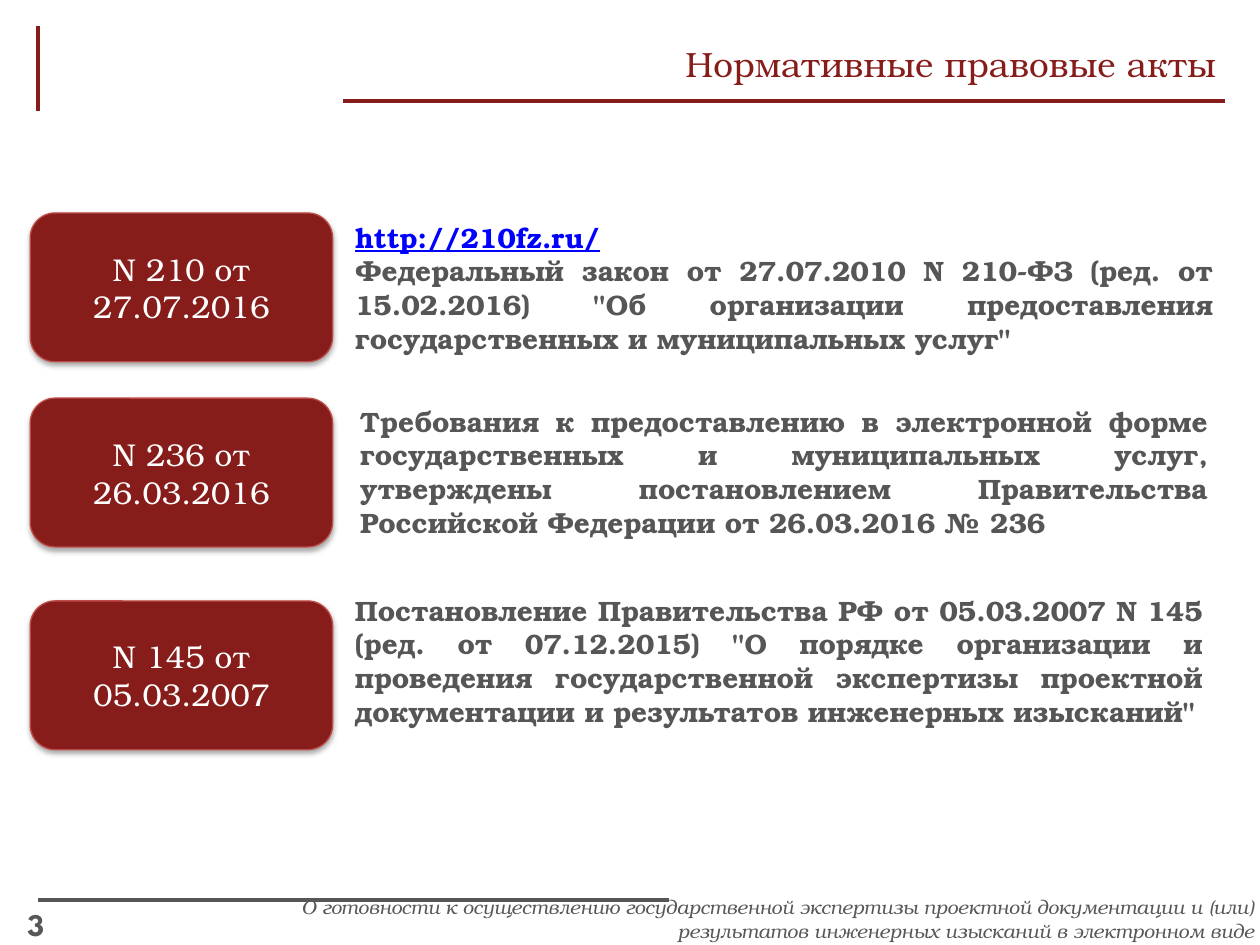
from lxml.etree import SubElement
from pptx import Presentation
from pptx.dml.color import RGBColor
from pptx.enum.shapes import MSO_CONNECTOR, MSO_SHAPE
from pptx.enum.text import MSO_ANCHOR, PP_ALIGN
from pptx.oxml.ns import qn
from pptx.util import Pt

COLORS = {
    "maroon": "861D1A",
    "card_edge": "BF4C48",
    "footer_gray": "565757",
    "body_gray": "575656",
    "link_blue": "0000FF",
    "white": "FFFFFF",
    "black": "000000",
}
SERIF = "TeX Gyre Bonum"
CARD_LEFT, CARD_WIDTH, CARD_HEIGHT = 17.3, 172.8, 85

ACTS = [
    {
        "number": "N 210 от 27.07.2016",
        "card_top": 121.7,
        "box": (195.8, 122.4, 504.7, 85),
        "paragraphs": [
            ("http://210fz.ru/", "link_blue"),
            ("Федеральный закон от 27.07.2010 N 210-ФЗ (ред. от 15.02.2016) "
             "\"Об организации предоставления государственных и муниципальных услуг\"", "body_gray"),
        ],
    },
    {
        "number": "N 236 от 26.03.2016",
        "card_top": 227.5,
        "box": (198.7, 227.5, 499, 87.8),
        "paragraphs": [
            ("Требования к предоставлению в электронной форме государственных и муниципальных услуг, "
             "утверждены постановлением Правительства Российской Федерации от 26.03.2016 № 236", "body_gray"),
        ],
    },
    {
        "number": "N 145 от 05.03.2007",
        "card_top": 343.4,
        "box": (195.8, 335.5, 499, 104.4),
        "paragraphs": [
            ("Постановление Правительства РФ от 05.03.2007 N 145 (ред. от 07.12.2015) "
             "\"О порядке организации и проведения государственной экспертизы "
             "проектной документации и результатов инженерных изысканий\"", "body_gray"),
        ],
    },
]


def color(name):
    return RGBColor.from_string(COLORS[name])


def style_font(paragraph, size, color_name, name=SERIF, bold=False, italic=False, underline=False):
    font = paragraph.font
    font.name = name
    font.size = Pt(size)
    font.bold = bold
    font.italic = italic
    font.underline = underline
    font.color.rgb = color(color_name)


def add_rule(slide, start_x, start_y, end_x, end_y, color_name):
    line = slide.shapes.add_connector(
        MSO_CONNECTOR.STRAIGHT, Pt(start_x), Pt(start_y), Pt(end_x), Pt(end_y))
    line.line.color.rgb = color(color_name)
    line.line.width = Pt(2.25)
    SubElement(line._element.spPr, qn("a:effectLst"))


def add_text(slide, box, paragraphs, size, align=PP_ALIGN.LEFT, **font_style):
    shape = slide.shapes.add_textbox(*map(Pt, box))
    frame = shape.text_frame
    frame.word_wrap = True
    for index, (text, color_name) in enumerate(paragraphs):
        paragraph = frame.add_paragraph() if index else frame.paragraphs[0]
        paragraph.text = text
        paragraph.alignment = align
        style_font(paragraph, size, color_name, underline=color_name == "link_blue", **font_style)
    return frame


def add_soft_shadow(shape):
    shape.shadow.inherit = False
    effects = shape._element.spPr.find(qn("a:effectLst"))
    shadow = SubElement(effects, qn("a:outerShdw"), blurRad=str(Pt(3.1)), dist=str(Pt(1.8)),
                        dir="5400000", rotWithShape="0")
    shade = SubElement(shadow, qn("a:srgbClr"), val=COLORS["black"])
    SubElement(shade, qn("a:alpha"), val="35000")


def add_card(slide, top, text):
    shape = slide.shapes.add_shape(
        MSO_SHAPE.ROUNDED_RECTANGLE, Pt(CARD_LEFT), Pt(top), Pt(CARD_WIDTH), Pt(CARD_HEIGHT))
    shape.fill.solid()
    shape.fill.fore_color.rgb = color("maroon")
    shape.line.color.rgb = color("card_edge")
    shape.line.width = Pt(0.75)
    add_soft_shadow(shape)
    frame = shape.text_frame
    frame.word_wrap = True
    frame.vertical_anchor = MSO_ANCHOR.MIDDLE
    paragraph = frame.paragraphs[0]
    paragraph.text = text
    paragraph.alignment = PP_ALIGN.CENTER
    style_font(paragraph, 18, "white")


def add_footer(slide):
    add_rule(slide, 21.6, 514.1, 382.3, 514.1, "footer_gray")
    add_text(slide, (8.6, 513.4, 45.4, 26.6), [("3", "footer_gray")], 18,
             name="League Spartan", bold=True)
    topic = ("О готовности к осуществлению государственной экспертизы проектной документации и (или) "
             "результатов инженерных изысканий в электронном виде")
    frame = add_text(slide, (90.7, 508.3, 626.4, 23.8), [(topic, "footer_gray")], 11,
                     PP_ALIGN.RIGHT, italic=True)
    frame.margin_right = Pt(0)


def add_header(slide):
    add_rule(slide, 21.6, 15.1, 21.6, 63.4, "maroon")
    add_rule(slide, 699.8, 57.6, 195.8, 57.6, "maroon")
    frame = add_text(slide, (190.1, 25.2, 511.9, 29.5), [("Нормативные правовые акты", "maroon")],
                     20, PP_ALIGN.RIGHT)
    frame.paragraphs[0].line_spacing = 0.8


def main():
    presentation = Presentation()
    presentation.slide_width = Pt(720)
    presentation.slide_height = Pt(540)
    slide = presentation.slides.add_slide(presentation.slide_layouts[6])
    add_header(slide)
    add_footer(slide)
    for act in ACTS:
        add_text(slide, act["box"], act["paragraphs"], 16, PP_ALIGN.JUSTIFY, bold=True)
        add_card(slide, act["card_top"], act["number"])
    presentation.save("out.pptx")


if __name__ == "__main__":
    main()
